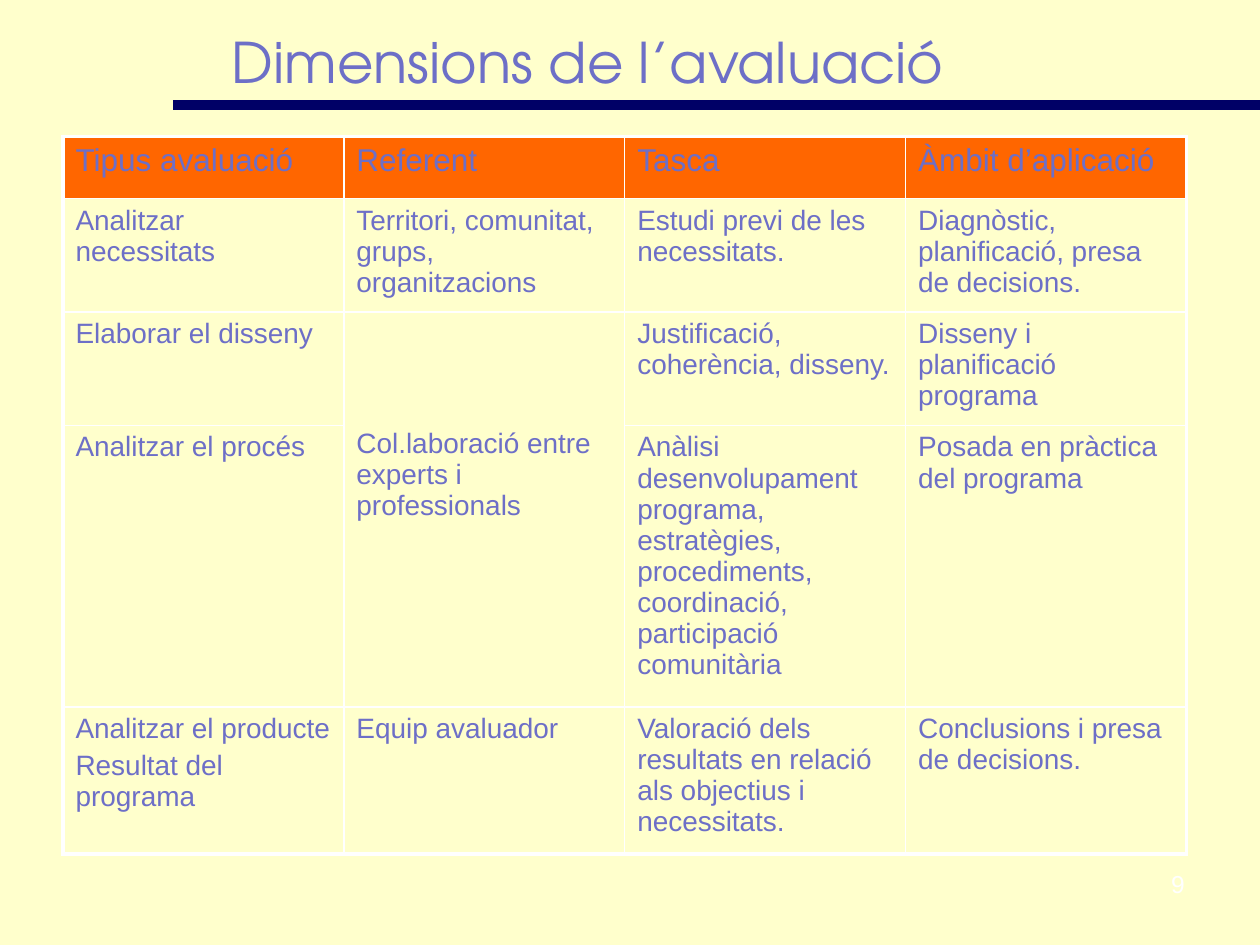
from dataclasses import dataclass

from lxml import etree
from pptx import Presentation
from pptx.dml.color import RGBColor
from pptx.enum.shapes import MSO_CONNECTOR
from pptx.enum.text import MSO_ANCHOR, PP_ALIGN
from pptx.oxml.ns import qn
from pptx.util import Pt

STRAIGHT = MSO_CONNECTOR.STRAIGHT
MIDDLE, TOP = MSO_ANCHOR.MIDDLE, MSO_ANCHOR.TOP
LEFT, CENTER, RIGHT = PP_ALIGN.LEFT, PP_ALIGN.CENTER, PP_ALIGN.RIGHT


@dataclass(frozen=True)
class Theme:
    background: str = "FFFFCC"
    text: str = "6D6FC7"
    header: str = "FF6600"
    rule: str = "000066"
    white: str = "FFFFFF"
    title_font: str = "TeX Gyre Adventor"
    body_font: str = "Arial"
    title_size: float = 32
    header_size: float = 18
    body_size: float = 16
    number_size: float = 14
    rule_width: float = 6
    outer_border: float = 2.25
    inner_border: float = 1


THEME = Theme()
HEADERS = ["Tipus avaluació", "Referent", "Tasca", "Àmbit d’aplicació"]
ROWS = [
    ["Analitzar necessitats", "Territori, comunitat, grups, organitzacions",
     "Estudi previ de les necessitats.", "Diagnòstic, planificació, presa de decisions."],
    ["Elaborar el disseny", "Col.laboració entre experts i professionals",
     "Justificació, coherència, disseny.", "Disseny i planificació programa"],
    ["Analitzar el procés", None,
     "Anàlisi desenvolupament programa, estratègies, procediments, coordinació, "
     "participació comunitària", "Posada en pràctica del programa"],
    ["Analitzar el producte\nResultat del programa", "Equip avaluador",
     "Valoració dels resultats en relació als objectius i necessitats.",
     "Conclusions i presa de decisions."],
]
ROW_HEIGHTS = [35.5, 64.5, 64.5, 161, 84]
MERGED_TOP = 66.5


def set_all(target, values):
    for name, value in values.items():
        setattr(target, name, value)


def write_text(frame, text, size, color, font, align=LEFT):
    frame.word_wrap = True
    for index, line in enumerate(text.split("\n")):
        para = frame.add_paragraph() if index else frame.paragraphs[0]
        para.alignment = align
        if index:
            para.space_before = Pt(size * 0.2)
        span = para.add_run()
        span.text = line
        set_all(span.font, {"name": font, "size": Pt(size)})
        span.font.color.rgb = RGBColor.from_string(color)


def add_text(page, box, text, size, color, font, align):
    frame = page.shapes.add_textbox(*map(Pt, box)).text_frame
    frame.vertical_anchor = MIDDLE
    write_text(frame, text, size, color, font, align)


def add_rule(page, box):
    left, top, width, height = box
    rule = page.shapes.add_connector(
        STRAIGHT, *map(Pt, (left, top, left + width, top + height)))
    rule.line.width = Pt(THEME.rule_width)
    rule.line.color.rgb = RGBColor.from_string(THEME.rule)
    etree.SubElement(rule._element.spPr, qn("a:effectLst"))


def set_borders(cell, outer_sides):
    properties = cell._tc.get_or_add_tcPr()
    for index, side in enumerate("LRTB"):
        width = THEME.outer_border if side in outer_sides else THEME.inner_border
        line = etree.Element(qn(f"a:ln{side}"), w=str(Pt(width)))
        fill = etree.SubElement(line, qn("a:solidFill"))
        etree.SubElement(fill, qn("a:srgbClr"), val=THEME.white)
        properties.insert(index, line)


def fill_cell(cell, text, is_header):
    cell.vertical_anchor = TOP
    if is_header:
        cell.fill.solid()
        cell.fill.fore_color.rgb = RGBColor.from_string(THEME.header)
    else:
        cell.fill.background()
    if text:
        size = THEME.header_size if is_header else THEME.body_size
        write_text(cell.text_frame, text, size, THEME.text, THEME.body_font)


def add_dimensions_table(page, box):
    rows = [HEADERS, *ROWS]
    last_row, last_column = len(rows) - 1, len(HEADERS) - 1
    table = page.shapes.add_table(len(rows), len(HEADERS), *map(Pt, box)).table
    set_all(table, {"first_row": False, "horz_banding": False})
    for column in table.columns:
        column.width = Pt(box[2] / len(HEADERS))
    for row, height in zip(table.rows, ROW_HEIGHTS):
        row.height = Pt(height)
    table.cell(2, 1).merge(table.cell(3, 1))
    for y, texts in enumerate(rows):
        for x, text in enumerate(texts):
            cell = table.cell(y, x)
            fill_cell(cell, text, y == 0)
            edges = {"L": x == 0, "R": x == last_column, "T": y == 0, "B": y == last_row}
            set_borders(cell, [side for side, outer in edges.items() if outer])
    table.cell(2, 1).margin_top = Pt(MERGED_TOP)


def main():
    deck = Presentation()
    set_all(deck, {"slide_width": Pt(720), "slide_height": Pt(540)})
    page = deck.slides.add_slide(deck.slide_layouts[6])
    page.background.fill.solid()
    page.background.fill.fore_color.rgb = RGBColor.from_string(THEME.background)
    add_text(page, (96, 12, 480, 46), "Dimensions de l’avaluació",
             THEME.title_size, THEME.text, THEME.title_font, CENTER)
    add_dimensions_table(page, (36, 78, 642, sum(ROW_HEIGHTS)))
    add_rule(page, (99, 60, 621, 0))
    add_text(page, (516, 492, 168, 26), "9",
             THEME.number_size, THEME.white, THEME.body_font, RIGHT)
    deck.save("out.pptx")


if __name__ == "__main__":
    main()
